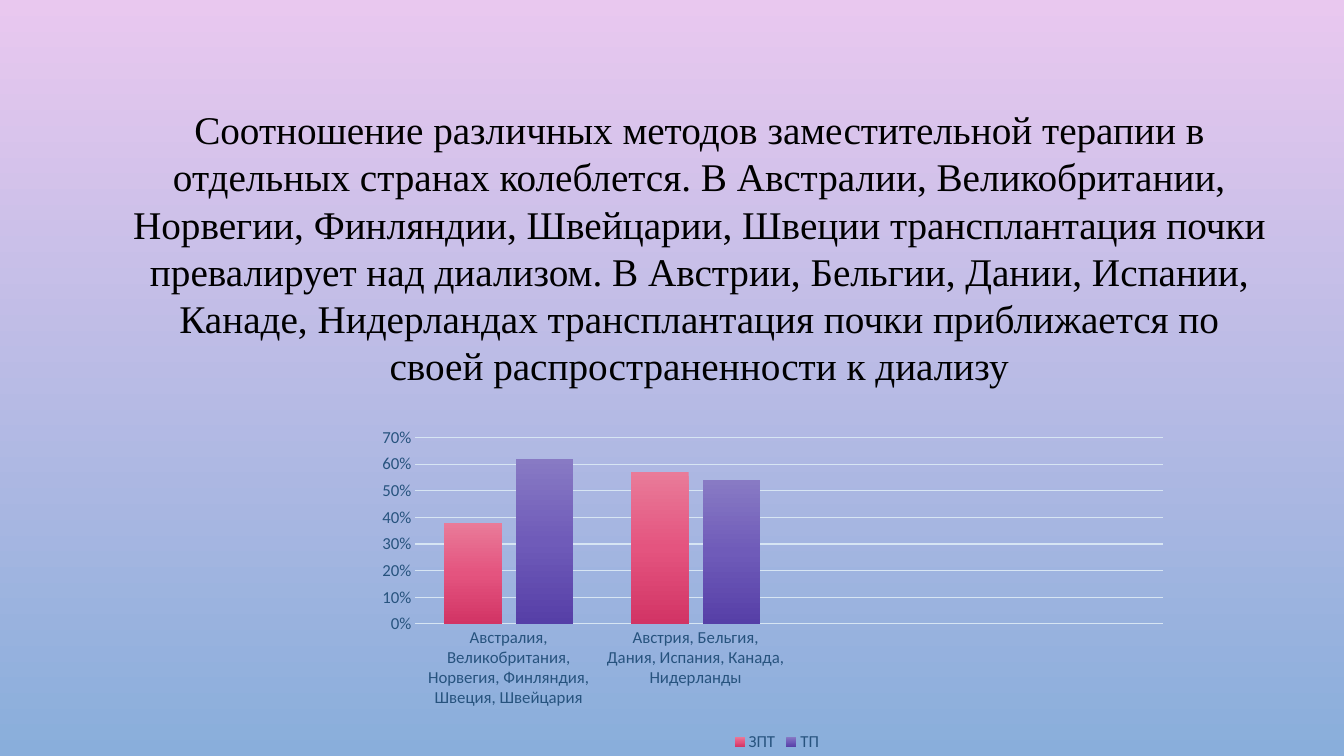
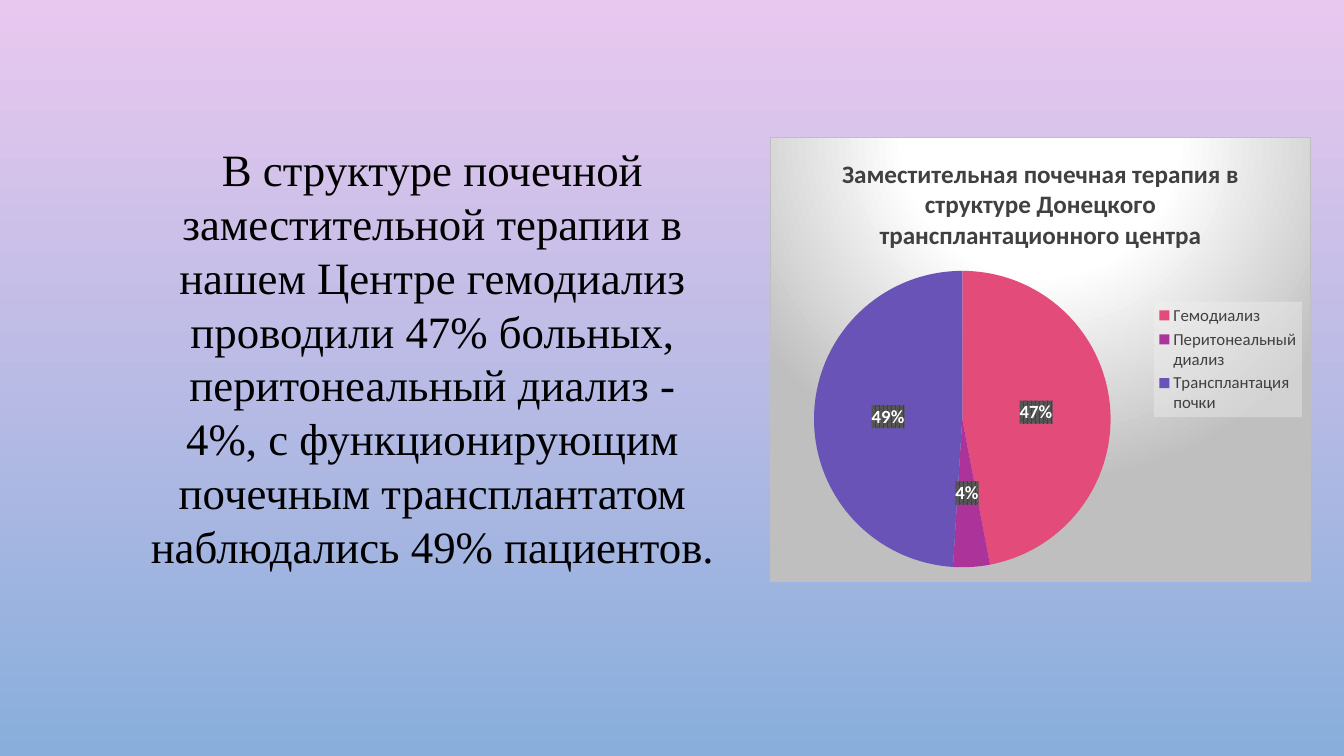
"""Two slides on renal replacement therapy: a column chart and a pie chart."""
from pptx import Presentation
from pptx.chart.data import CategoryChartData
from pptx.dml.color import RGBColor
from pptx.enum import chart as ch, text as tx
from pptx.oxml import parse_xml
from pptx.oxml.ns import nsdecls, qn
from pptx.util import Inches, Pt

PINK, SKY = RGBColor(0xE9, 0xC8, 0xEF), RGBColor(0x89, 0xAE, 0xDB)
BLACK, WHITE = RGBColor(0, 0, 0), RGBColor(0xFF, 0xFF, 0xFF)
NAVY, PALE = RGBColor(0x27, 0x53, 0x7E), RGBColor(0xD7, 0xE5, 0xF3)
DARK, GREY = RGBColor(0x40, 0x40, 0x40), RGBColor(0x59, 0x59, 0x59)
SILVER, MIST = RGBColor(0xBF, 0xBF, 0xBF), RGBColor(0xF2, 0xF2, 0xF2)
SLICES = [RGBColor(0xE3, 0x4B, 0x7A), RGBColor(0xAC, 0x33, 0x9A), RGBColor(0x69, 0x53, 0xB7)]
ROSE = [(0, RGBColor(0xE9, 0x7B, 0x99)), (50, RGBColor(0xE4, 0x54, 0x7F)), (100, RGBColor(0xD2, 0x34, 0x65))]
VIOLET = [(0, RGBColor(0x88, 0x7A, 0xC4)), (50, RGBColor(0x6F, 0x5B, 0xB9)), (100, RGBColor(0x56, 0x3F, 0xA7))]
GLOW = [(0, WHITE), (39, WHITE), (100, SILVER)]
DOWN = '<a:lin ang="5400000" scaled="0"/>'
SPOT = '<a:path path="circle"><a:fillToRect l="50000" t="-80000" r="50000" b="180000"/></a:path>'

COUNTRIES = {
    "text": "Соотношение различных методов заместительной терапии в отдельных странах колеблется. "
            "В Австралии, Великобритании, Норвегии, Финляндии, Швейцарии, Швеции трансплантация почки "
            "превалирует над диализом. В Австрии, Бельгии, Дании, Испании, Канаде, Нидерландах "
            "трансплантация почки приближается по своей распространенности к диализу",
    "text_at": (1.22, 1, 11.43, 2.93), "size": 28,
    "chart_at": (3.63, 4.14, 8.15, 3.36), "plot": (0.06, 0.06, 0.91, 0.55),
    "kind": ch.XL_CHART_TYPE.COLUMN_CLUSTERED, "format": "0%",
    "categories": ["Австралия, Великобритания, Норвегия, Финляндия, Швеция, Швейцария",
                   "Австрия, Бельгия, Дания, Испания, Канада, Нидерланды", "", ""],
    "series": {"ЗПТ": (0.38, 0.57, None, None), "ТП": (0.62, 0.54, None, None)},
    "legend": (ch.XL_LEGEND_POSITION.BOTTOM, NAVY),
}
CENTRE = {
    "text": "В структуре почечной заместительной терапии в нашем Центре гемодиализ проводили 47% больных, "
            "перитонеальный диализ - 4%, с функционирующим почечным трансплантатом наблюдались 49% пациентов.",
    "text_at": (1.38, 1.36, 5.82, 4.41), "size": 32,
    "chart_at": (7.64, 1.36, 5.36, 4.41), "plot": (0.08, 0.3, 0.55, 0.67),
    "kind": ch.XL_CHART_TYPE.PIE, "format": "General",
    "categories": ["Гемодиализ", "Перитонеальный диализ", "Трансплантация почки"],
    "series": {"Series 1": (47, 4, 49)},
    "legend": (ch.XL_LEGEND_POSITION.RIGHT, DARK),
}
TITLE = "Заместительная почечная терапия в структуре Донецкого трансплантационного центра"


def style(font, size, color, name="Calibri", bold=False):
    font.size, font.name, font.bold = Pt(size), name, bold
    font.color.rgb = color


def gradient(stops, direction):
    marks = "".join(f'<a:gs pos="{at * 1000}"><a:srgbClr val="{color}"/></a:gs>' for at, color in stops)
    return f'<a:gradFill {nsdecls("a")}><a:gsLst>{marks}</a:gsLst>{direction}</a:gradFill>'


def paint(owner, fill, line=""):
    """Give a chart part a fill, placed ahead of its text properties."""
    props = parse_xml(f'<c:spPr {nsdecls("c", "a")}>{fill}{line}</c:spPr>')
    owner.find(qn("c:txPr")).addprevious(props)


def place_plot(chart, box):
    area = chart._chartSpace.find(".//" + qn("c:plotArea"))
    for old in area.findall(qn("c:layout")):
        area.remove(old)
    sizes = "".join(f'<c:{key} val="{value}"/>' for key, value in zip("xywh", box))
    area.insert(0, parse_xml(
        f'<c:layout {nsdecls("c")}><c:manualLayout><c:layoutTarget val="inner"/>'
        f'<c:xMode val="edge"/><c:yMode val="edge"/>{sizes}</c:manualLayout></c:layout>'))


def build_page(deck, content):
    page = deck.slides.add_slide(deck.slide_layouts[6])
    frame = page.shapes.add_textbox(*map(Inches, content["text_at"])).text_frame
    frame.word_wrap = True
    frame.auto_size = tx.MSO_AUTO_SIZE.SHAPE_TO_FIT_TEXT
    para = frame.paragraphs[0]
    para.text, para.alignment = content["text"], tx.PP_ALIGN.CENTER
    style(para.font, content["size"], BLACK, "Times New Roman")

    data = CategoryChartData(number_format=content["format"])
    data.categories = content["categories"]
    for name, values in content["series"].items():
        data.add_series(name, values)
    chart = page.shapes.add_chart(content["kind"], *map(Inches, content["chart_at"]), data).chart
    style(chart.font, 10, BLACK)
    chart.has_title = False
    chart.has_legend = True
    chart.legend.position, color = content["legend"]
    chart.legend.include_in_layout = False
    style(chart.legend.font, 12, color)
    place_plot(chart, content["plot"])
    return chart


def format_columns(chart):
    plot = chart.plots[0]
    plot.gap_width, plot.overlap, plot.vary_by_categories = 100, -24, False
    for series, stops in zip(plot.series, (ROSE, VIOLET)):
        series.invert_if_negative = False
        series._element.get_or_add_spPr().append(parse_xml(gradient(stops, DOWN)))
    for axis in (chart.category_axis, chart.value_axis):
        axis.major_tick_mark = axis.minor_tick_mark = ch.XL_TICK_MARK.NONE
        style(axis.tick_labels.font, 12, NAVY)
    values = chart.value_axis
    values.minimum_scale, values.maximum_scale, values.major_unit = 0, 0.7, 0.1
    values.tick_labels.number_format = "0%"
    values.tick_labels.number_format_is_linked = False
    values.format.line.fill.background()
    for line in (chart.category_axis.format.line, values.major_gridlines.format.line):
        line.color.rgb, line.width = PALE, Pt(0.75)


def format_pie(chart):
    chart.has_title = True
    para = chart.chart_title.text_frame.paragraphs[0]
    para.text = TITLE
    style(para.font, 18, DARK, bold=True)
    chart.chart_title.include_in_layout = False
    plot = chart.plots[0]
    plot.vary_by_categories = True
    series = plot.series[0]
    for index, color in enumerate(SLICES):
        fill = series.points[index].format.fill
        fill.solid()
        fill.fore_color.rgb = color
    labels = series.data_labels
    labels.show_percentage, labels.show_value = True, False
    labels.number_format, labels.number_format_is_linked = "0%", False
    labels.position = ch.XL_LABEL_POSITION.CENTER
    style(labels.font, 13.3, WHITE, bold=True)
    paint(labels._element, f'<a:pattFill prst="pct75"><a:fgClr><a:srgbClr val="{DARK}"/></a:fgClr>'
                           f'<a:bgClr><a:srgbClr val="{GREY}"/></a:bgClr></a:pattFill>')
    paint(chart.legend._element, f'<a:solidFill><a:srgbClr val="{MIST}"><a:alpha val="39000"/>'
                                 '</a:srgbClr></a:solidFill>')
    paint(chart._chartSpace, gradient(GLOW, SPOT),
          f'<a:ln w="9525"><a:solidFill><a:srgbClr val="{SILVER}"/></a:solidFill></a:ln>')


def main():
    deck = Presentation()
    deck.slide_width, deck.slide_height = Inches(13.33), Inches(7.5)
    backdrop = deck.slide_master.background.fill
    backdrop.gradient()
    backdrop.gradient_angle = 270
    for stop, position, color in zip(backdrop.gradient_stops, (0, 1), (PINK, SKY)):
        stop.position, stop.color.rgb = position, color
    format_columns(build_page(deck, COUNTRIES))
    format_pie(build_page(deck, CENTRE))
    deck.save("out.pptx")


if __name__ == "__main__":
    main()
